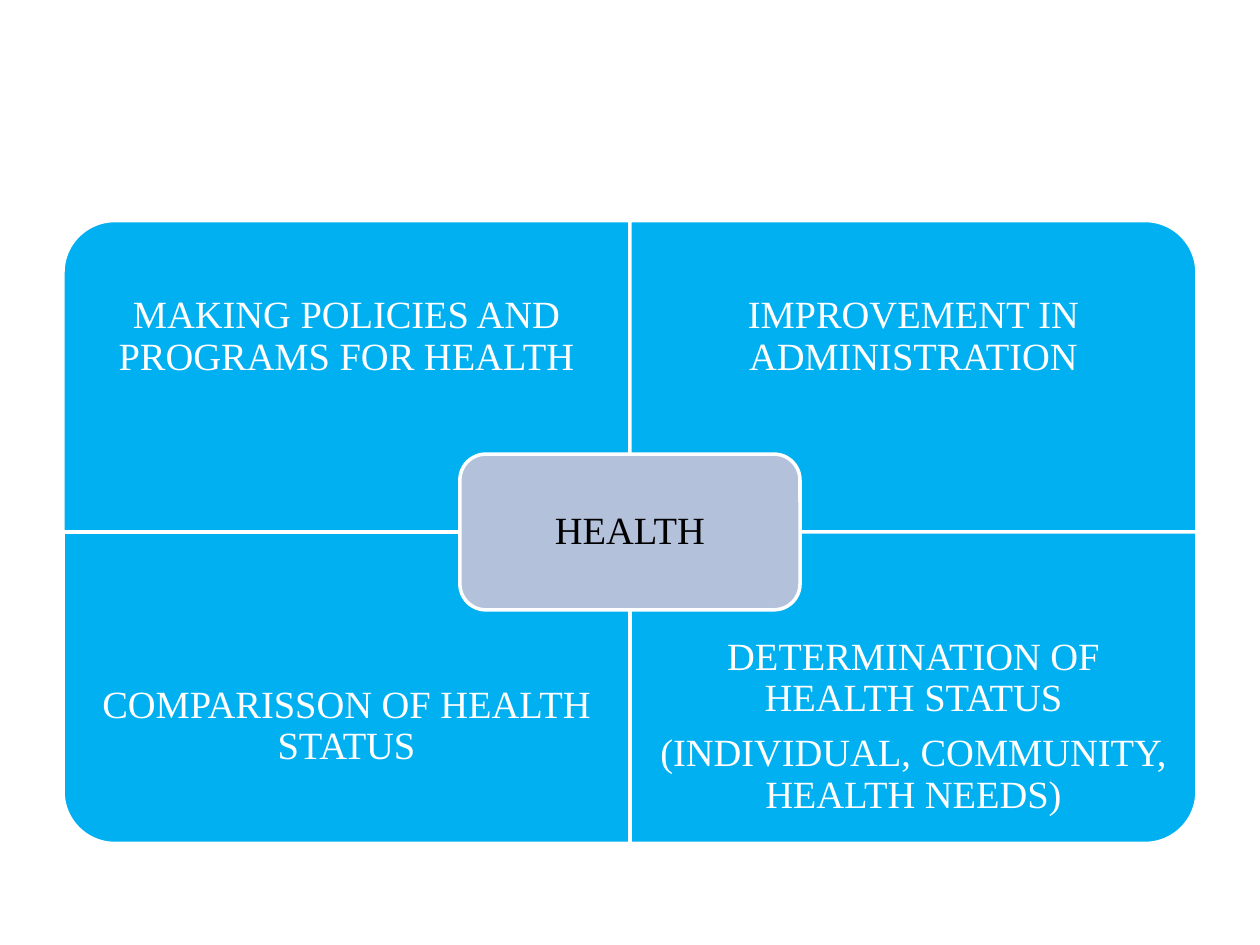
from pptx import Presentation
from pptx.dml.color import RGBColor
from pptx.enum.shapes import MSO_SHAPE
from pptx.enum.text import MSO_ANCHOR, PP_ALIGN
from pptx.util import Pt

ROUND = MSO_SHAPE.ROUNDED_RECTANGLE
CORNER = MSO_SHAPE.ROUND_1_RECTANGLE
MIDDLE = MSO_ANCHOR.MIDDLE
CENTER = PP_ALIGN.CENTER

WHITE = RGBColor(0xFF, 0xFF, 0xFF)
BLACK = RGBColor(0x00, 0x00, 0x00)
BLUE = RGBColor(0x00, 0xB0, 0xF0)
GREY = RGBColor(0xB3, 0xC1, 0xDB)

LEFT, TOP = 36, 126
WIDE, HIGH = 324, 178      # one quadrant
TEXT = 0.75 * HIGH         # the part of a quadrant clear of the hub

# column, row, turn of the rounded corner, lines
PARTS = [
    (0, 0, 270, ["MAKING POLICIES AND PROGRAMS FOR HEALTH"]),
    (1, 0, 0, ["IMPROVEMENT IN ADMINISTRATION"]),
    (0, 1, 180, ["COMPARISSON OF HEALTH STATUS"]),
    (1, 1, 90, ["DETERMINATION OF HEALTH STATUS",
                "(INDIVIDUAL, COMMUNITY, HEALTH NEEDS)"]),
]


class Deck:
    font, size = "Times New Roman", 22

    def __init__(self, slide):
        self.slide = slide

    def shape(self, kind, x, y, w, h, fill, turn=0):
        """Add a shape that covers the given area after its turn."""
        if turn % 180:
            x, y, w, h = x + (w - h) / 2, y + (h - w) / 2, h, w
        shape = self.slide.shapes.add_shape(kind, Pt(x), Pt(y), Pt(w), Pt(h))
        shape.rotation = turn
        shape.shadow.inherit = False
        shape.fill.solid()
        shape.fill.fore_color.rgb = fill
        shape.line.color.rgb = WHITE
        shape.line.width = Pt(2)
        return shape

    def label(self, x, y, w, h, lines):
        box = self.slide.shapes.add_textbox(Pt(x), Pt(y), Pt(w), Pt(h))
        self.text(box.text_frame, lines, WHITE, 12)

    def text(self, frame, lines, color, inset):
        frame.word_wrap = True
        frame.vertical_anchor = MIDDLE
        frame.margin_left = frame.margin_right = Pt(inset)
        frame.margin_top = frame.margin_bottom = Pt(inset)
        for i, line in enumerate(lines):
            para = frame.add_paragraph() if i else frame.paragraphs[0]
            para.alignment = CENTER
            para.line_spacing = 0.9
            para.space_after = Pt(0.35 * self.size)
            run = para.add_run()
            run.text = line
            run.font.name = self.font
            run.font.size = Pt(self.size)
            run.font.color.rgb = color


def main():
    prs = Presentation()
    prs.slide_width, prs.slide_height = Pt(720), Pt(540)
    deck = Deck(prs.slides.add_slide(prs.slide_layouts[6]))

    for col, row, turn, lines in PARTS:
        x, y = LEFT + col * WIDE, TOP + row * HIGH
        deck.shape(CORNER, x, y, WIDE, HIGH, BLUE, turn)
        deck.label(x, y + row * (HIGH - TEXT), WIDE, TEXT, lines)

    w, h = 0.6 * WIDE, 0.5 * HIGH
    hub = deck.shape(ROUND, LEFT + WIDE - w / 2, TOP + HIGH - h / 2, w, h, GREY)
    deck.text(hub.text_frame, ["HEALTH"], BLACK, 6.5)

    prs.save("out.pptx")


if __name__ == "__main__":
    main()
